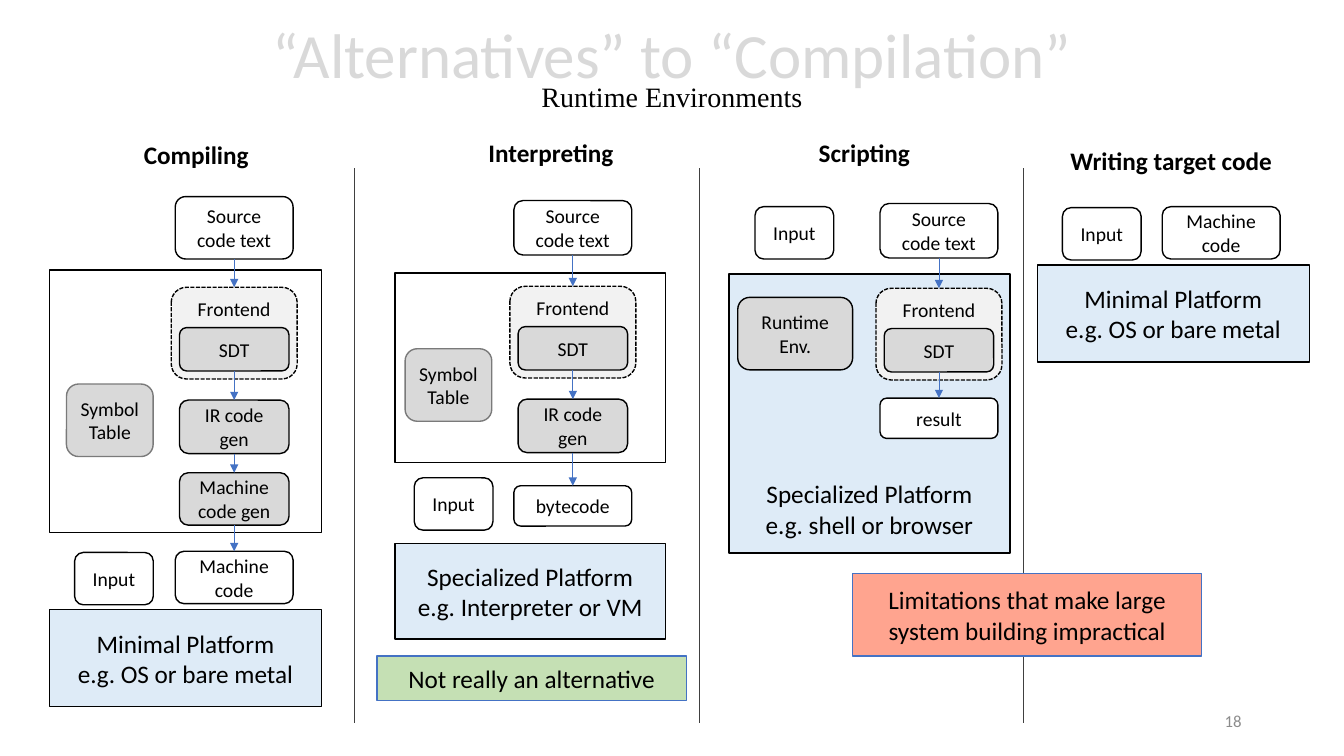
from itertools import pairwise

from lxml.etree import SubElement
from pptx import Presentation
from pptx.dml.color import RGBColor
from pptx.enum.dml import MSO_LINE
from pptx.enum.shapes import MSO_CONNECTOR, MSO_SHAPE
from pptx.enum.text import MSO_ANCHOR, PP_ALIGN
from pptx.oxml.ns import qn
from pptx.util import Pt

COLORS = {
    "black": "000000", "white": "FFFFFF", "title": "D9D9D9", "number": "8C8C8C",
    "module": "D9D9D9", "frontend": "F2F2F2", "table_edge": "7A7A7A",
    "platform": "DEEBF7", "blue": "4472C4", "divider": "404040",
    "limits": "FFA48F", "remark": "C5E0B4",
}

presentation = Presentation()
presentation.slide_width, presentation.slide_height = Pt(960), Pt(540)
slide = presentation.slides.add_slide(presentation.slide_layouts[6])


def write(shape, text, size=14, color="black", bold=False, font="Calibri",
          align=PP_ALIGN.CENTER, anchor=MSO_ANCHOR.MIDDLE):
    """Fill the shape with text, one paragraph per line, and format it."""
    frame = shape.text_frame
    frame.text = text
    frame.word_wrap = True
    frame.vertical_anchor = anchor
    for paragraph in frame.paragraphs:
        paragraph.alignment = align
        paragraph.font.size = Pt(size)
        paragraph.font.name = font
        paragraph.font.bold = bold
        paragraph.font.color.rgb = RGBColor.from_string(COLORS[color])
    return frame


def add_box(left, top, width, height, fill, text="", kind=MSO_SHAPE.ROUNDED_RECTANGLE,
            edge="black", **text_format):
    box = slide.shapes.add_shape(kind, Pt(left), Pt(top), Pt(width), Pt(height))
    box.shadow.inherit = False
    box.fill.solid()
    box.fill.fore_color.rgb = RGBColor.from_string(COLORS[fill])
    box.line.color.rgb = RGBColor.from_string(COLORS[edge])
    box.line.width = Pt(1)
    write(box, text, **text_format)
    return box


# Title, page number and column headings
title = slide.shapes.add_textbox(Pt(0), Pt(0.7), Pt(960), Pt(104.4))
title_frame = write(title, "“Alternatives” to “Compilation”\nRuntime Environments",
                    size=45, color="title")
for paragraph in title_frame.paragraphs:
    paragraph.line_spacing = 0.7
subtitle = title_frame.paragraphs[1].font
subtitle.size, subtitle.name = Pt(20), "Times New Roman"
subtitle.color.rgb = RGBColor.from_string(COLORS["black"])

page_number = slide.shapes.add_textbox(Pt(678), Pt(500.4), Pt(216), Pt(28.8))
write(page_number, "18", size=12, color="number", align=PP_ALIGN.RIGHT)

for heading, center, top in [
    ("Compiling", 140.2, 95.8), ("Interpreting", 393.5, 94.3),
    ("Scripting", 617.4, 94.3), ("Writing target code", 836.6, 100.1),
]:
    heading_box = slide.shapes.add_textbox(Pt(center - 100), Pt(top), Pt(200), Pt(28.8))
    write(heading_box, heading, size=18, bold=True, anchor=MSO_ANCHOR.TOP)

# Frames and platforms behind the pipelines
for left, top, width, height, fill, label in [
    (35.3, 193, 194.4, 187.2, "white", ""),
    (282.2, 195.1, 193, 135.4, "white", ""),
    (35.3, 435.6, 194.4, 69.1, "platform", "Minimal Platform\ne.g. OS or bare metal"),
    (282.2, 388.1, 193, 68.4, "platform", "Specialized Platform\ne.g. Interpreter or VM"),
    (740.9, 189.4, 194.4, 69.1, "platform", "Minimal Platform\ne.g. OS or bare metal"),
]:
    add_box(left, top, width, height, fill, label, MSO_SHAPE.RECTANGLE, size=18)

browser = add_box(520.6, 195.8, 200.9, 199.4, "platform",
                  "Specialized Platform\ne.g. shell or browser",
                  MSO_SHAPE.RECTANGLE, size=18, anchor=MSO_ANCHOR.BOTTOM)
browser.text_frame.margin_bottom = Pt(10)

# Boxes beside the pipelines
for left, top in [(53.3, 394.6), (295.9, 341.3), (539.3, 147.6), (758.9, 148.3)]:
    add_box(left, top, 56.2, 37.4, "white", "Input")
for left, top in [(47.5, 274.3), (289.4, 249.1)]:
    add_box(left, top, 61.9, 51.8, "module", "Symbol Table", edge="table_edge")
add_box(527, 212.4, 82.1, 51.8, "module", "Runtime\nEnv.")
add_box(830.2, 147.6, 84.2, 37.4, "white", "Machine code")

# Pipelines: center, then each step as text, fill, top and height
WIDTHS = {"white": 84.2, "module": 78.2, "frontend": 90}
pipelines = [
    (167.3, [("Source code text", "white", 140.4, 44.6), ("SDT", "module", 234, 31),
             ("IR code gen", "module", 285.8, 38.2),
             ("Machine code gen", "module", 337.7, 37.4),
             ("Machine code", "white", 393.8, 37.4)]),
    (409.2, [("Source code text", "white", 143.3, 38.9), ("SDT", "module", 233.3, 31),
             ("IR code gen", "module", 285.1, 38.2), ("bytecode", "white", 347, 28.8)]),
    (670.7, [("Source code text", "white", 145.4, 38.9), ("SDT", "module", 234.7, 31),
             ("result", "white", 284.4, 28.8)]),
]
arrows = []
for center, steps in pipelines:
    entries, exits = [], []
    for text, fill, top, height in steps:
        frontend = None
        if text == "SDT":
            width = WIDTHS["frontend"]
            frontend = add_box(center - width / 2, top - 28.8, width, 65.5, "frontend",
                               "Frontend", anchor=MSO_ANCHOR.TOP)
            frontend.line.dash_style = MSO_LINE.SQUARE_DOT
        step = add_box(center - WIDTHS[fill] / 2, top, WIDTHS[fill], height, fill, text)
        entries.append(frontend or step)
        exits.append(step)
    for (source, _), (_, target) in pairwise(zip(exits, entries)):
        arrow = slide.shapes.add_connector(MSO_CONNECTOR.STRAIGHT, 0, 0, 0, 0)
        arrow.begin_connect(source, 2)
        arrow.end_connect(target, 0)
        arrows.append(arrow)

dividers = [
    slide.shapes.add_connector(MSO_CONNECTOR.STRAIGHT, Pt(x), Pt(120.2), Pt(x), Pt(516.2))
    for x in (253.4, 499.7, 730.8)
]
for connectors, color in [(arrows, "blue"), (dividers, "divider")]:
    for connector in connectors:
        connector.line.color.rgb = RGBColor.from_string(COLORS[color])
        connector.line.width = Pt(0.5)
        SubElement(connector.element.spPr, qn("a:effectLst"))
for arrow in arrows:
    SubElement(arrow.line._get_or_add_ln(), qn("a:tailEnd"), type="triangle")

# Verdicts
add_box(609.1, 409.7, 249.1, 59, "limits",
        "Limitations that make large system building impractical",
        MSO_SHAPE.RECTANGLE, edge="blue", size=18)
add_box(269.3, 468.7, 221, 31.7, "remark", "Not really an alternative",
        MSO_SHAPE.RECTANGLE, edge="blue", size=18)

presentation.save("out.pptx")
